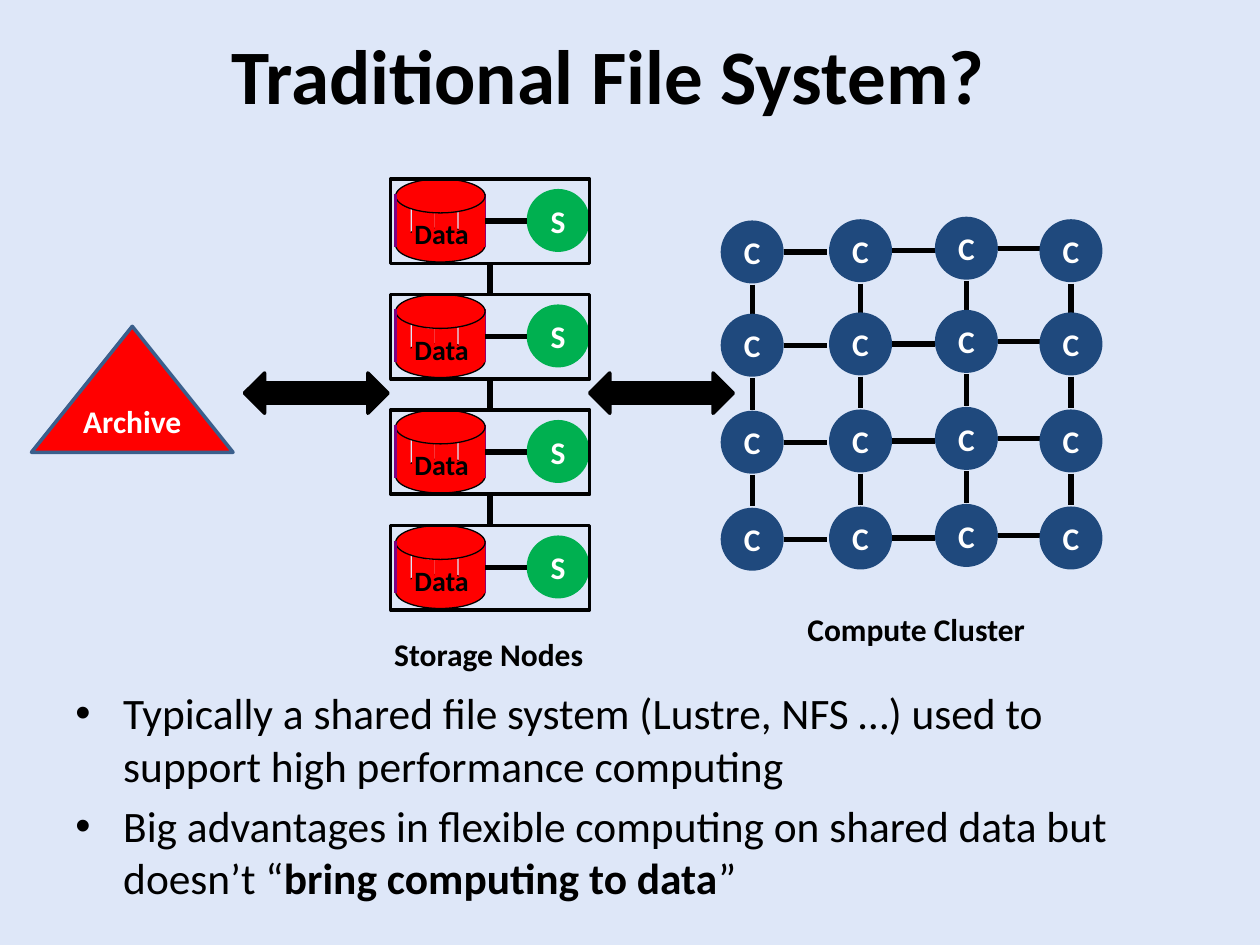
from dataclasses import dataclass

from lxml import etree
from pptx import Presentation
from pptx.dml.color import RGBColor
from pptx.enum.shapes import MSO_CONNECTOR, MSO_SHAPE
from pptx.enum.text import MSO_ANCHOR, PP_ALIGN
from pptx.oxml.ns import qn
from pptx.util import Inches, Pt

ELLIPSE = MSO_SHAPE.OVAL
RECTANGLE = MSO_SHAPE.RECTANGLE
TRIANGLE = MSO_SHAPE.ISOSCELES_TRIANGLE
DOUBLE_ARROW = MSO_SHAPE.LEFT_RIGHT_ARROW
STRAIGHT = MSO_CONNECTOR.STRAIGHT
LEFT, CENTER = PP_ALIGN.LEFT, PP_ALIGN.CENTER
TOP, MIDDLE = MSO_ANCHOR.TOP, MSO_ANCHOR.MIDDLE


@dataclass(frozen=True)
class Theme:
    font: str = "Calibri"
    background: str = "DEE7F8"
    black: str = "000000"
    white: str = "FFFFFF"
    red: str = "FF0000"
    green: str = "00B050"
    navy: str = "1F497D"
    purple: str = "800080"
    archive_edge: str = "3A5F8C"
    title_size: float = 44
    body_size: float = 24.8
    label_size: float = 18
    data_size: float = 16


THEME = Theme()

# Cylinder body: left, top, width and height within a storage node
CYLINDER_STRIPS = [
    (0.35, 0.27, 0.09, 0.36), (0.44, 0.24, 0.09, 0.39), (0.23, 0.27, 0.12, 0.33),
    (0.04, 0.15, 0.12, 0.39), (0.17, 0.21, 0.12, 0.39), (0.54, 0.21, 0.09, 0.39),
    (0.63, 0.18, 0.09, 0.39), (0.66, 0.15, 0.09, 0.39),
]
# Cluster columns: left and downward shift of each, then the row tops
CLUSTER_COLUMNS = [(0, 0.03), (0.86, 0.02), (1.7, 0), (2.53, 0.02)]
CLUSTER_ROWS = [0, 0.74, 1.51, 2.28]
NODE_SIZE = 0.5

BULLETS = [
    [("Typically a shared file system (Lustre, NFS …) used to "
      "support high performance computing", False)],
    [("Big advantages in flexible computing on shared data but doesn’t “", False),
     ("bring computing to data", True), ("”", False)],
]


def add_runs(paragraph, runs, size, color):
    for text, bold in runs:
        run = paragraph.add_run()
        run.text = text
        run.font.color.rgb = RGBColor.from_string(color)
        settings = {"name": THEME.font, "size": Pt(size), "bold": bold}
        for name, value in settings.items():
            setattr(run.font, name, value)


def add_shape(shapes, kind, box, fill=None, line=None, width=2, label=None):
    shape = shapes.add_shape(kind, *map(Inches, box))
    shape.shadow.inherit = False
    if fill:
        shape.fill.solid()
        shape.fill.fore_color.rgb = RGBColor.from_string(fill)
    else:
        shape.fill.background()
    if line:
        shape.line.color.rgb = RGBColor.from_string(line)
        shape.line.width = Pt(width)
    else:
        shape.line.fill.background()
    if label:
        frame = shape.text_frame
        settings = {"margin_left": 0, "margin_right": 0, "margin_top": 0,
                    "margin_bottom": 0, "vertical_anchor": MIDDLE}
        for name, value in settings.items():
            setattr(frame, name, value)
        paragraph = frame.paragraphs[0]
        paragraph.alignment = CENTER
        add_runs(paragraph, [(label, True)], THEME.label_size, THEME.white)


def add_line(shapes, start, end, color=THEME.black, width=3):
    line = shapes.add_connector(STRAIGHT, *map(Inches, (*start, *end)))
    line.line.color.rgb = RGBColor.from_string(color)
    line.line.width = Pt(width)
    etree.SubElement(line._element.spPr, qn("a:effectLst"))


def add_label(shapes, box, text, size, alignment=LEFT, anchor=TOP, wrap=True):
    frame = shapes.add_textbox(*map(Inches, box)).text_frame
    frame.word_wrap = wrap
    frame.vertical_anchor = anchor
    paragraph = frame.paragraphs[0]
    paragraph.alignment = alignment
    add_runs(paragraph, [(text, True)], size, THEME.black)


def add_bullets(shapes, box):
    frame = shapes.add_textbox(*map(Inches, box)).text_frame
    frame.word_wrap = True
    for index, runs in enumerate(BULLETS):
        paragraph = frame.add_paragraph() if index else frame.paragraphs[0]
        properties = paragraph._p.get_or_add_pPr()
        properties.set("marL", str(Inches(0.38)))
        properties.set("indent", str(-Inches(0.38)))
        etree.SubElement(properties, qn("a:buFont")).set("typeface", "Arial")
        etree.SubElement(properties, qn("a:buChar")).set("char", "•")
        paragraph.space_before = Pt(5 if index else 0)
        add_runs(paragraph, runs, THEME.body_size, THEME.black)


def add_storage_node(shapes, box):
    left, top, width, height = box
    disk_left, disk_right = left + 0.04, left + 0.75
    middle = top + height / 2
    add_shape(shapes, ELLIPSE, (left + width - NODE_SIZE, top + 0.08, NODE_SIZE, NODE_SIZE),
              THEME.green, label="S")

    # Data cylinder
    add_shape(shapes, ELLIPSE, (disk_left, top + 0.39, 0.71, 0.27), THEME.red, THEME.black, 0.75)
    add_line(shapes, (disk_right, top + 0.12), (disk_right, top + 0.54), THEME.purple, 1.5)
    add_line(shapes, (left + 0.44, top + 0.27), (left + 0.44, top + 0.39), THEME.purple, 1.5)
    for x, y, strip_width, strip_height in CYLINDER_STRIPS:
        add_shape(shapes, RECTANGLE, (left + x, top + y, strip_width, strip_height), THEME.red)
    add_shape(shapes, ELLIPSE, (disk_left, top, 0.71, 0.27), THEME.red, THEME.black, 0.75)
    add_line(shapes, (disk_left, top + 0.12), (disk_left, top + 0.54), THEME.purple, 1.5)
    add_label(shapes, (left, top + 0.25, 0.81, 0.37), "Data", THEME.data_size, CENTER, MIDDLE)

    # Link to the server and outer frame
    add_line(shapes, (disk_right, middle), (left + width - NODE_SIZE, middle))
    add_shape(shapes, RECTANGLE, box, line=THEME.black)


def add_storage_nodes(shapes, box, count=4):
    left, top, width, height = box
    node_height = 0.67
    pitch = (height - node_height) / (count - 1)
    center = left + width / 2
    for index in range(count):
        node_top = top + index * pitch
        add_storage_node(shapes, (left, node_top, width, node_height))
        if index < count - 1:
            add_line(shapes, (center, node_top + node_height), (center, node_top + pitch))
    add_label(shapes, (left - 0.07, top + height + 0.15, 1.71, 0.4),
              "Storage Nodes", THEME.label_size, wrap=False)


def add_compute_cluster(shapes, box):
    left, top, _, height = box
    for column, (x, shift) in enumerate(CLUSTER_COLUMNS):
        for row, y in enumerate(CLUSTER_ROWS):
            node_left, node_top = left + x, top + shift + y
            right, middle = node_left + NODE_SIZE, node_top + NODE_SIZE / 2
            center, below = node_left + NODE_SIZE / 2, node_top + 0.51
            add_shape(shapes, ELLIPSE, (node_left, node_top, NODE_SIZE, NODE_SIZE),
                      THEME.navy, label="C")
            if column < len(CLUSTER_COLUMNS) - 1:
                add_line(shapes, (right, middle), (right + 0.34, middle))
            if row < len(CLUSTER_ROWS) - 1:
                add_line(shapes, (center, below), (center, below + 0.25))
    add_label(shapes, (left + 0.59, top + height + 0.26, 1.94, 0.4),
              "Compute Cluster", THEME.label_size, wrap=False)


def main():
    presentation = Presentation()
    presentation.slide_width, presentation.slide_height = Inches(10), Inches(7.5)
    slide = presentation.slides.add_slide(presentation.slide_layouts[6])
    slide.background.fill.solid()
    slide.background.fill.fore_color.rgb = RGBColor.from_string(THEME.background)
    shapes = slide.shapes

    # Title and body
    add_label(shapes, (0.33, 0.17, 9, 0.83), "Traditional File System?",
              THEME.title_size, CENTER, MIDDLE)
    add_bullets(shapes, (0.5, 5.4, 9, 1.6))

    # Diagram
    add_storage_nodes(shapes.add_group_shape().shapes, (3.1, 1.42, 1.58, 3.42))
    add_compute_cluster(shapes.add_group_shape().shapes, (5.72, 1.72, 3.03, 2.81))
    for arrow_left in (4.68, 1.94):
        add_shape(shapes, DOUBLE_ARROW, (arrow_left, 2.96, 1.14, 0.32), THEME.black, THEME.black)
    add_shape(shapes, TRIANGLE, (0.25, 2.59, 1.6, 1), THEME.red, THEME.archive_edge,
              label="Archive")

    presentation.save("out.pptx")


if __name__ == "__main__":
    main()
